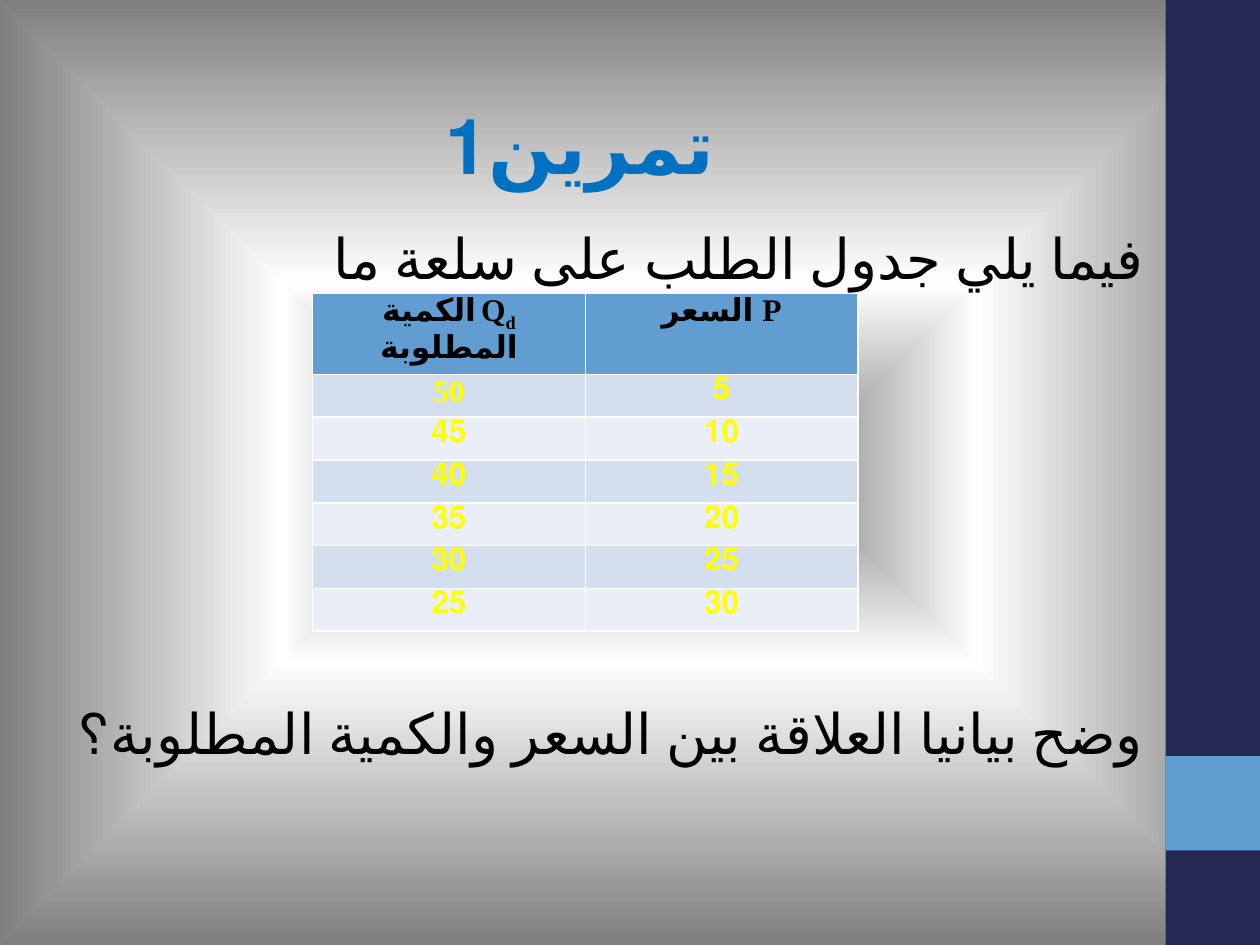
from lxml.etree import SubElement
from pptx import Presentation
from pptx.dml.color import RGBColor
from pptx.enum.shapes import MSO_SHAPE as Shape
from pptx.enum.text import MSO_ANCHOR as Anchor, PP_ALIGN as Align
from pptx.oxml.ns import qn
from pptx.util import Inches, Pt

COLORS = {
    "edge": "7F7F7F", "glow": "FFFFFF", "navy": "242852", "accent": "629DD1",
    "title": "0070C0", "ink": "000000", "value": "FFFF00",
    "odd": "D3DFEE", "even": "EAEFF7",
}


def rgb(name):
    return RGBColor.from_string(COLORS[name])


class SlideBuilder:
    def __init__(self, deck):
        self.page = deck.slides.add_slide(deck.slide_layouts[6])
        self.language = "ar-SA"

    def background(self, stops):
        self.page.background.fill.solid()
        props = self.page.element.find(f".//{qn('p:bgPr')}")
        props.remove(props[0])
        gradient = SubElement(props, qn("a:gradFill"), rotWithShape="1")
        props.insert(0, gradient)
        stop_list = SubElement(gradient, qn("a:gsLst"))
        for percent, name in stops:
            stop = SubElement(stop_list, qn("a:gs"), pos=str(percent * 1000))
            SubElement(stop, qn("a:srgbClr"), val=COLORS[name])
        shade = SubElement(gradient, qn("a:path"), path="shape")
        center = dict.fromkeys("ltrb", "50000")
        SubElement(shade, qn("a:fillToRect"), center)

    def bar(self, left, top, width, height, color):
        box = self.page.shapes.add_shape(
            Shape.RECTANGLE, Inches(left), Inches(top), Inches(width), Inches(height))
        box.shadow.inherit = False
        box.fill.solid()
        box.fill.fore_color.rgb = rgb(color)
        box.line.fill.background()

    def paragraph(self, para, spans, rtl=True, **layout):
        for name, value in layout.items():
            setattr(para, name, value)
        if rtl:
            para._p.get_or_add_pPr().set("rtl", "1")
        for text, style in spans:
            self.span(para, text, **style)

    def span(self, para, text, color, base=0, **style):
        span = para.add_run()
        span.text = text
        for name, value in style.items():
            setattr(span.font, name, value)
        span.font.color.rgb = rgb(color)
        props = span.font._element
        props.set("lang", self.language)
        if base:
            props.set("baseline", str(base * 1000))

    def text(self, left, top, width, height, paragraphs):
        box = self.page.shapes.add_textbox(
            Inches(left), Inches(top), Inches(width), Inches(height))
        frame = box.text_frame
        frame.word_wrap = True
        frame.vertical_anchor = Anchor.TOP
        for index, (spans, layout) in enumerate(paragraphs):
            para = frame.add_paragraph() if index else frame.paragraphs[0]
            self.paragraph(para, spans, line_spacing=1.5, **layout)

    def table(self, left, top, width, row_height, header, rows):
        count = len(rows) + 1
        grid = self.page.shapes.add_table(
            count, len(header), Inches(left), Inches(top),
            Inches(width), Inches(row_height * count)).table
        style = {"size": Pt(18), "bold": True, "name": "Times New Roman"}
        for column, parts in enumerate(header):
            spans = [(text, {**style, "color": "ink", "base": base}) for text, base in parts]
            self.cell(grid.cell(0, column), spans, "accent", 6)
        for row, values in enumerate(rows, 1):
            for column, value in enumerate(values):
                self.cell(grid.cell(row, column), [(str(value), {**style, "color": "value"})],
                          "odd" if row % 2 else "even", 2, rtl=(row, column) != (1, 0))

    def cell(self, cell, spans, fill, before, rtl=True):
        margins = {"margin_left": 0.07, "margin_right": 0.07, "margin_top": 0, "margin_bottom": 0}
        for name, value in margins.items():
            setattr(cell, name, Inches(value))
        cell.fill.solid()
        cell.fill.fore_color.rgb = rgb(fill)
        self.paragraph(cell.text_frame.paragraphs[0], spans, rtl,
                       alignment=Align.CENTER, space_before=Pt(before))


def main():
    deck = Presentation()
    deck.slide_width, deck.slide_height = Inches(10), Inches(7.5)
    slide = SlideBuilder(deck)
    slide.background([(0, "edge"), (40, "glow"), (100, "edge")])
    slide.bar(9.25, 0, 0.75, 7.5, "navy")
    slide.bar(9.25, 6, 0.75, 0.75, "accent")

    title = {"size": Pt(44), "bold": True, "name": "Calibri", "color": "title"}
    body = {"size": Pt(32), "bold": False, "name": "Calibri", "color": "ink"}
    slide.text(0.2, 0.36, 8.98, 5.81, [
        ([(" تمرين1", title)], {"alignment": Align.CENTER}),
        ([("فيما يلي جدول الطلب على سلعة ما ", body)], {"alignment": Align.RIGHT}),
        ([("وضح بيانيا العلاقة بين السعر والكمية المطلوبة؟ ", body)],
         {"alignment": Align.RIGHT, "space_before": Pt(214)}),
    ])

    header = [[("Q", 0), ("d ", -25), ("الكمية المطلوبة", 0)], [("P السعر", 0)]]
    demand = [(55 - price, price) for price in range(5, 31, 5)]
    slide.table(2.48, 2.33, 4.33, 0.34, header, demand)
    deck.save("out.pptx")


if __name__ == "__main__":
    main()
